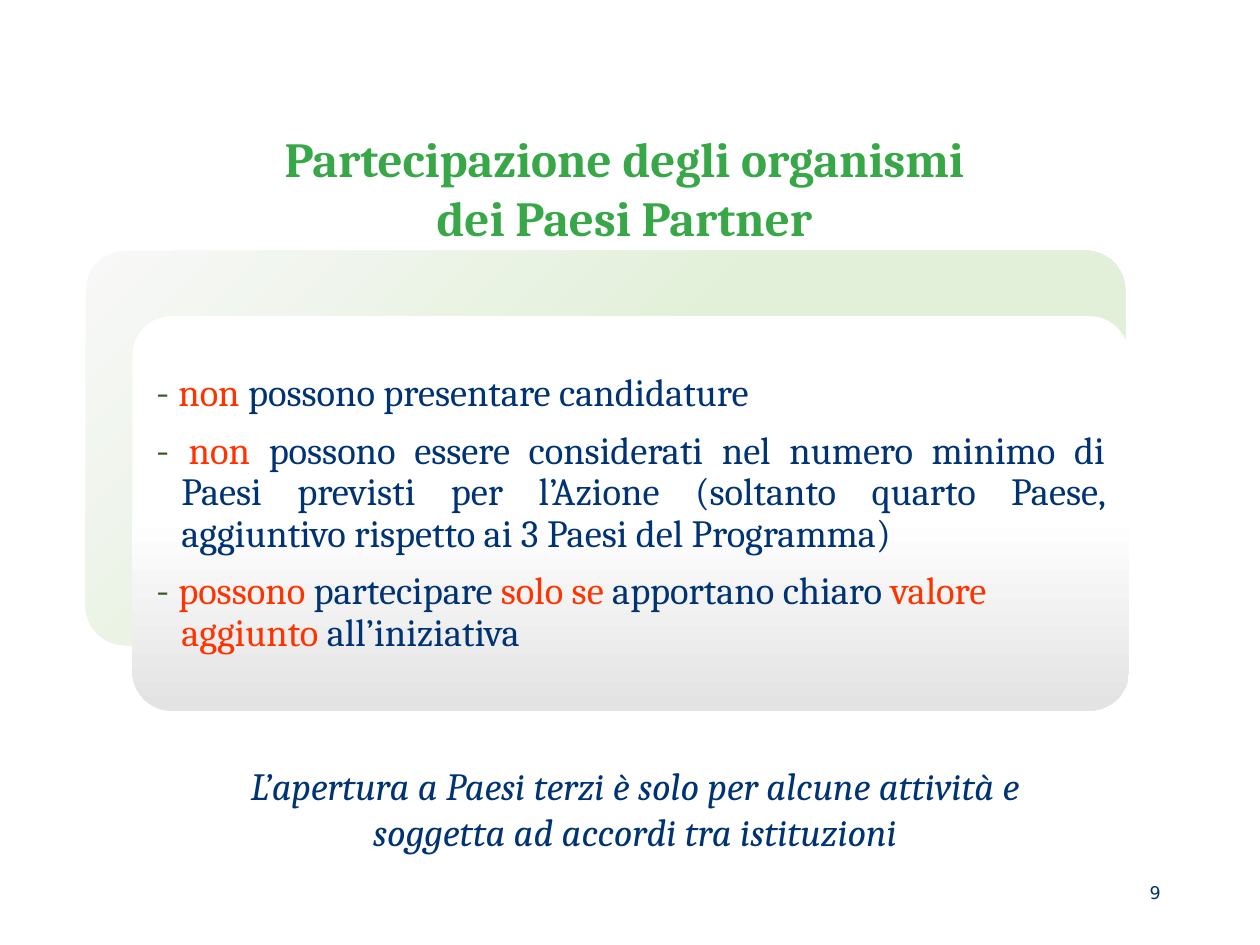
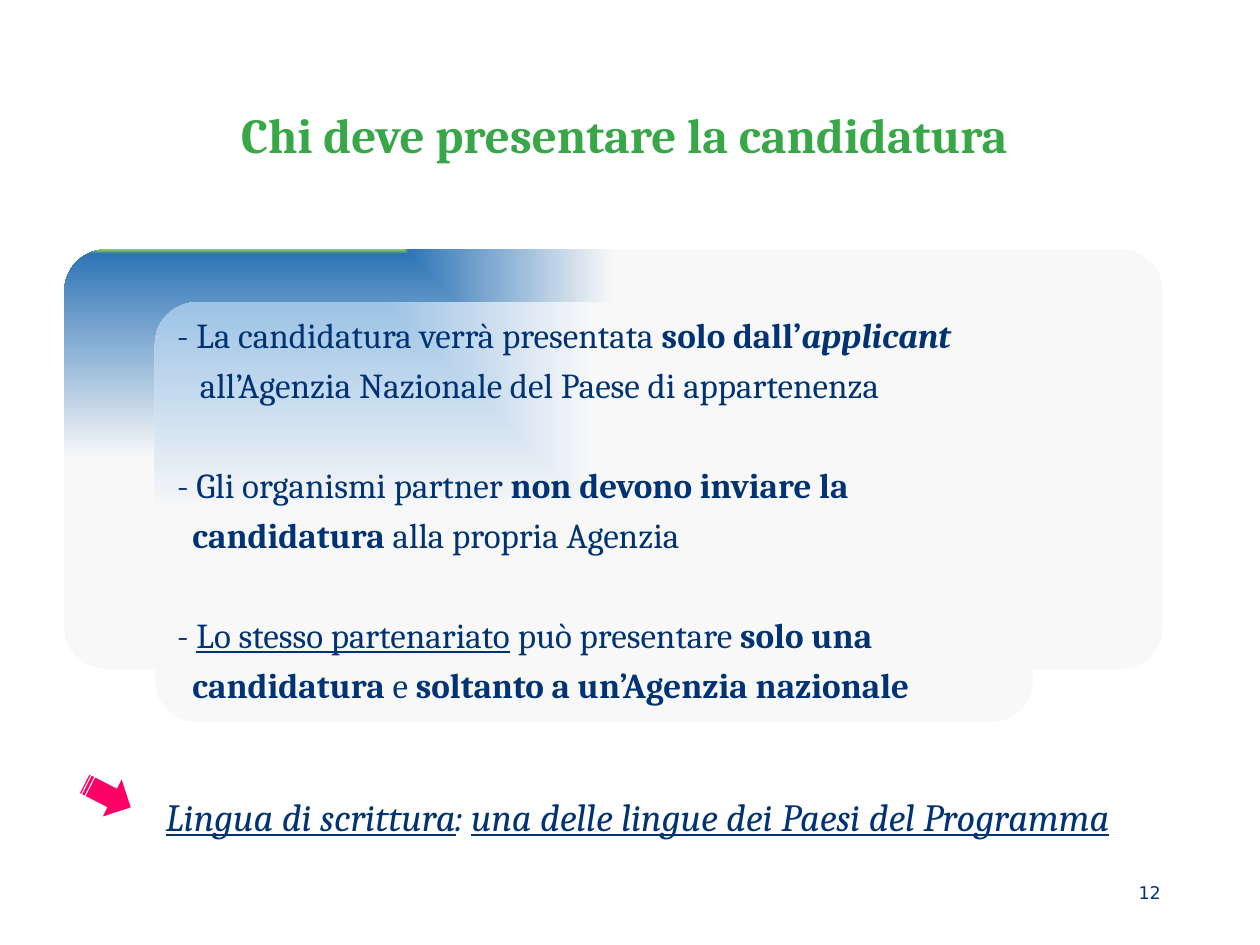
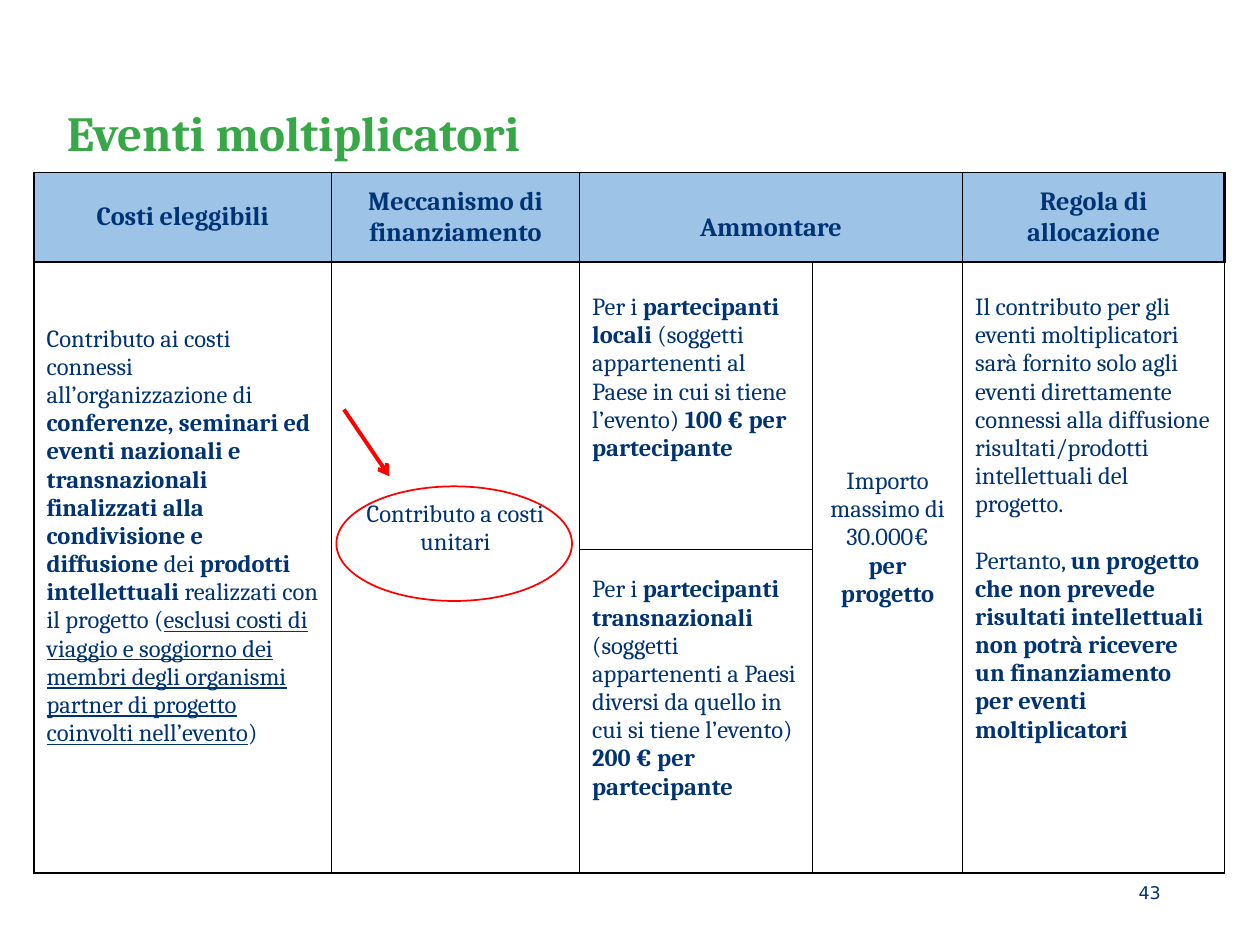
import pptx
import pptx.dml.color
import pptx.enum.shapes
import pptx.enum.text
import pptx.oxml
import pptx.util
from pptx.util import Inches, Pt

NS = 'xmlns:a="http://schemas.openxmlformats.org/drawingml/2006/main"'
SHAPE = pptx.enum.shapes.MSO_SHAPE
ALIGN = pptx.enum.text.PP_ALIGN
ANCHOR = pptx.enum.text.MSO_ANCHOR
RGB = pptx.dml.color.RGBColor.from_string

THEME = {
    "font": "Cambria", "number_font": "DejaVu Sans",
    "title": "38A748", "text": "003374", "accent": "FF3300", "dash": "385723",
    "header": "9DC3E6", "cell": "FFFFFF", "border": "000000",
    "callout": "FF0000", "pointer": "FF0066",
    "title_size": 28, "body_size": 22, "dash_size": 23, "list_size": 20,
    "header_size": 15, "cell_size": 14, "number_size": 10,
}


def write(frame, paragraphs, size, color=THEME["text"], font=THEME["font"], hang=None, **formats):
    """Each paragraph is (runs, own formats); a run is (text, marks):
    b bold, i italic, u underline, r accent colour, d dash."""
    frame.word_wrap = True
    for index, (runs, own) in enumerate(paragraphs):
        paragraph = frame.add_paragraph() if index else frame.paragraphs[0]
        own = {"hang": hang, **formats, **own}
        margins = own.pop("hang")
        if margins:
            for key, inches in zip(("marL", "indent"), margins):
                paragraph._p.get_or_add_pPr().set(key, str(int(Inches(inches))))
        for key, value in own.items():
            setattr(paragraph, key, value)
        for text, marks in runs:
            run = paragraph.add_run()
            run.text = text
            tint = THEME["accent"] if "r" in marks else THEME["dash"] if "d" in marks else color
            look = {"name": font, "size": Pt(THEME["dash_size"] if "d" in marks else size),
                    "bold": "b" in marks, "italic": "i" in marks, "underline": "u" in marks}
            for key, value in look.items():
                setattr(run.font, key, value)
            run.font.color.rgb = RGB(tint)


def add_plain(slide, kind, box):
    """Add a preset shape without shadow, fill or outline."""
    shape = slide.shapes.add_shape(kind, *map(Inches, box))
    shape.shadow.inherit = False
    shape.fill.background()
    shape.line.fill.background()
    return shape


deck = pptx.Presentation()
deck.slide_width, deck.slide_height = Inches(10), Inches(7.5)

# Titles and page numbers
headings = [
    (["Partecipazione degli organismi", "dei Paesi Partner"], (0.59, 0.97, 8.73, 1.04), "9",
     {"alignment": ALIGN.CENTER}),
    (["Chi deve presentare la candidatura"], (0.59, 0.78, 8.73, 0.57), "12",
     {"alignment": ALIGN.CENTER}),
    (["Eventi moltiplicatori"], (0.43, 0.81, 9.21, 0.53), "43",
     {"alignment": ALIGN.LEFT, "line_spacing": 0.9}),
]
slides = []
for lines, box, number, formats in headings:
    slide = deck.slides.add_slide(deck.slide_layouts[5])
    slides.append(slide)
    title = slide.shapes.title
    for key, value in zip(("left", "top", "width", "height"), box):
        setattr(title, key, Inches(value))
    title.text_frame.auto_size = pptx.enum.text.MSO_AUTO_SIZE.NONE
    title.text_frame.vertical_anchor = ANCHOR.MIDDLE
    write(title.text_frame, [([(line, "b")], {}) for line in lines],
          THEME["title_size"], THEME["title"], **formats)
    page = slide.shapes.add_textbox(*map(Inches, (7.06, 6.95, 2.25, 0.4)))
    write(page.text_frame, [([(number, "")], {})], THEME["number_size"],
          font=THEME["number_font"], alignment=ALIGN.RIGHT)
partners, applicant, events = slides

# Layered panels: slide, box, gradient stops, gradient direction
top_left = '<a:path path="rect"><a:fillToRect r="100000" b="100000"/></a:path>'
bottom_right = '<a:path path="circle"><a:fillToRect l="100000" t="100000"/></a:path>'
downward = '<a:lin ang="5400000" scaled="0"/>'
panels = [
    (partners, (0.68, 1.99, 8.25, 3.13), [(51, "E2F0D9"), (100, "F8F8F8")], bottom_right),
    (partners, (1.05, 2.51, 7.91, 3.13), [(0, "FFFFFF"), (50, "FFFFFF"), (100, "E3E3E3")], downward),
    (applicant, (0.51, 1.98, 8.72, 3.33), [(0, "92D050"), (2, "2E75B6"), (100, "F8F8F8")], top_left),
    (applicant, (1.23, 2.4, 6.97, 3.33), [(0, "9DC3E6"), (100, "F8F8F8")], top_left),
]
front = {}
for slide, box, stops, direction in panels:
    panel = add_plain(slide, SHAPE.ROUNDED_RECTANGLE, box)
    panel.adjustments[0] = 0.1
    colours = "".join(f'<a:gs pos="{at * 1000}"><a:srgbClr val="{rgb}"/></a:gs>' for at, rgb in stops)
    no_fill = panel._element.spPr.find(pptx.oxml.ns.qn("a:noFill"))
    no_fill.getparent().replace(no_fill, pptx.oxml.parse_xml(
        f'<a:gradFill {NS} rotWithShape="1"><a:gsLst>{colours}</a:gsLst>{direction}</a:gradFill>'))
    front[slide.slide_id] = panel

# Rules for partners and for the applicant, in the front panels
gap = {"space_before": Pt(28.5)}
partner_rules = [
    ([("- ", "d"), ("non ", "r"), ("possono presentare candidature", "")], {"hang": None}),
    ([("- ", "d"), ("non ", "r"),
      ("possono essere considerati nel numero minimo di Paesi previsti per l’Azione "
       "(soltanto quarto Paese, aggiuntivo rispetto ai 3 Paesi del Programma)", "")],
     {"alignment": ALIGN.JUSTIFY}),
    ([("- ", "d"), ("possono ", "r"), ("partecipare ", ""), ("solo se ", "r"),
      ("apportano chiaro ", ""), ("valore aggiunto ", "r"), ("all’iniziativa", "")], {}),
]
applicant_rules = [
    ([("- La candidatura verrà presentata ", ""), ("solo dall’", "b"), ("applicant", "bi")], {}),
    ([("all’Agenzia Nazionale del Paese di appartenenza", "")], {"hang": (0.18, 0)}),
    ([("- Gli organismi partner ", ""), ("non devono inviare la", "b")], gap),
    ([("candidatura", "b"), (" alla propria Agenzia", "")], {"hang": (0.12, 0)}),
    ([("- ", ""), ("Lo stesso partenariato", "u"), (" può presentare ", ""), ("solo una", "b")], gap),
    ([("candidatura", "b"), (" e ", ""), ("soltanto a un’Agenzia nazionale", "b")], {"hang": (0.12, 0)}),
]
for slide, rules, size, inset, after in [
    (partners, partner_rules, THEME["body_size"], 0.1, 8),
    (applicant, applicant_rules, THEME["list_size"], 0.08, 7),
]:
    frame = front[slide.slide_id].text_frame
    frame.vertical_anchor = ANCHOR.MIDDLE
    for side in ("left", "top", "right", "bottom"):
        setattr(frame, f"margin_{side}", Inches(inset))
    write(frame, rules, size, hang=(0.2, -0.2), alignment=ALIGN.LEFT,
          line_spacing=0.9, space_after=Pt(after))

# Closing remarks under the panels
for slide, box, remark, spacing in [
    (partners, (0.16, 6, 9.76, 0.91),
     [([("L’apertura a Paesi terzi è solo per alcune attività e", "i")], {}),
      ([("soggetta ad accordi tra istituzioni", "i")], {})], 1.0),
    (applicant, (0.32, 6.06, 9.48, 0.59),
     [([("Lingua di scrittura", "iu"), (": ", "i"),
        ("una delle lingue dei Paesi del Programma", "iu")], {})], 1.5),
]:
    closing = slide.shapes.add_textbox(*map(Inches, box))
    write(closing.text_frame, remark, THEME["body_size"], alignment=ALIGN.CENTER, line_spacing=spacing)

pointer = add_plain(applicant, SHAPE.STRIPED_RIGHT_ARROW, (0.65, 6.15, 0.41, 0.33))
pointer.rotation = 27
pointer.fill.solid()
pointer.fill.fore_color.rgb = RGB(THEME["pointer"])

# Cost table: grid, borders and fills
widths, heights = (2.36, 1.97, 1.85, 1.19, 2.08), (0.71, 2.28, 2.57)
costs = events.shapes.add_table(len(heights), len(widths), *map(Inches, (0.27, 1.37, 9.45, 5.56))).table
costs.first_row = costs.horz_banding = False
for column, width in zip(costs.columns, widths):
    column.width = Inches(width)
for row, height in zip(costs.rows, heights):
    row.height = Inches(height)
for r in range(len(heights)):
    for c in range(len(widths)):
        cell = costs.cell(r, c)
        for side in "LRTB":
            weight = 2.25 if (r, c, side) == (0, 4, "R") else 1
            cell._tc.get_or_add_tcPr().append(pptx.oxml.parse_xml(
                f'<a:ln{side} {NS} w="{int(Pt(weight))}"><a:solidFill>'
                f'<a:srgbClr val="{THEME["border"]}"/></a:solidFill></a:ln{side}>'))
        cell.fill.solid()
        cell.fill.fore_color.rgb = RGB(THEME["cell" if r else "header"])
costs.cell(0, 2).merge(costs.cell(0, 3))
for c in (0, 1, 3, 4):
    costs.cell(1, c).merge(costs.cell(2, c))

# Cost table: texts as row, column, top margin, alignment, paragraphs
entries = [
    (0, 0, 0.05, ALIGN.CENTER, [([("Costi eleggibili", "b")], {})]),
    (0, 1, 0.05, ALIGN.CENTER, [([("Meccanismo di finanziamento", "b")], {})]),
    (0, 2, 0.21, ALIGN.CENTER, [([("Ammontare", "b")], {})]),
    (0, 4, 0.05, ALIGN.CENTER, [([("Regola di allocazione", "b")], {})]),
    (1, 0, 0.5, ALIGN.LEFT, [([
        ("Contributo ai costi connessi all’organizzazione di ", ""),
        ("conferenze, seminari ed eventi nazionali e transnazionali finalizzati "
         "alla condivisione e diffusione", "b"),
        (" dei ", ""), ("prodotti intellettuali ", "b"), ("realizzati con il progetto (", ""),
        ("esclusi costi di viaggio e soggiorno dei membri degli organismi partner "
         "di progetto coinvolti nell’evento", "u"), (")", "")], {})]),
    (1, 1, 1.89, ALIGN.CENTER, [([("Contributo a costi unitari", "")], {})]),
    (1, 2, 0.25, ALIGN.LEFT, [([
        ("Per i ", ""), ("partecipanti locali", "b"),
        (" (soggetti appartenenti al Paese in cui si tiene l’evento) ", ""),
        ("100 € per partecipante", "b")], {})]),
    (1, 3, 1.63, ALIGN.CENTER, [([("Importo massimo di 30.000€ ", ""), ("per progetto", "b")], {})]),
    (1, 4, 0.25, ALIGN.LEFT, [
        ([("Il contributo per gli eventi moltiplicatori sarà fornito solo agli eventi direttamente "
           "connessi alla diffusione risultati/prodotti intellettuali del progetto.", "")], {}),
        ([("Pertanto, ", ""),
          ("un progetto che non prevede risultati intellettuali non potrà ricevere "
           "un finanziamento per eventi moltiplicatori", "b")], {"space_before": Pt(16)})]),
    (2, 2, 0.21, ALIGN.LEFT, [([
        ("Per i ", ""), ("partecipanti transnazionali", "b"),
        (" (soggetti appartenenti a Paesi diversi da quello in cui si tiene l’evento) ", ""),
        ("200 € per partecipante", "b")], {})]),
]
for r, c, top, alignment, paragraphs in entries:
    cell = costs.cell(r, c)
    cell.margin_top = Inches(top)
    cell.vertical_anchor = ANCHOR.TOP if r else ANCHOR.MIDDLE
    write(cell.text_frame, paragraphs, THEME["cell_size" if r else "header_size"], alignment=alignment)

# Callout on the unit-cost contribution
ring = add_plain(events, SHAPE.OVAL, (2.67, 3.86, 1.87, 0.91))
arrow = events.shapes.add_connector(pptx.enum.shapes.MSO_CONNECTOR.STRAIGHT,
                                    *map(Inches, (2.73, 3.25, 3.09, 3.78)))
for mark, weight in ((ring, 1), (arrow, 2.25)):
    mark.line.color.rgb = RGB(THEME["callout"])
    mark.line.width = Pt(weight)
arrow.line._get_or_add_ln().append(pptx.oxml.parse_xml(f'<a:tailEnd {NS} type="arrow"/>'))
arrow._element.spPr.append(pptx.oxml.parse_xml(f"<a:effectLst {NS}/>"))

deck.save("out.pptx")
